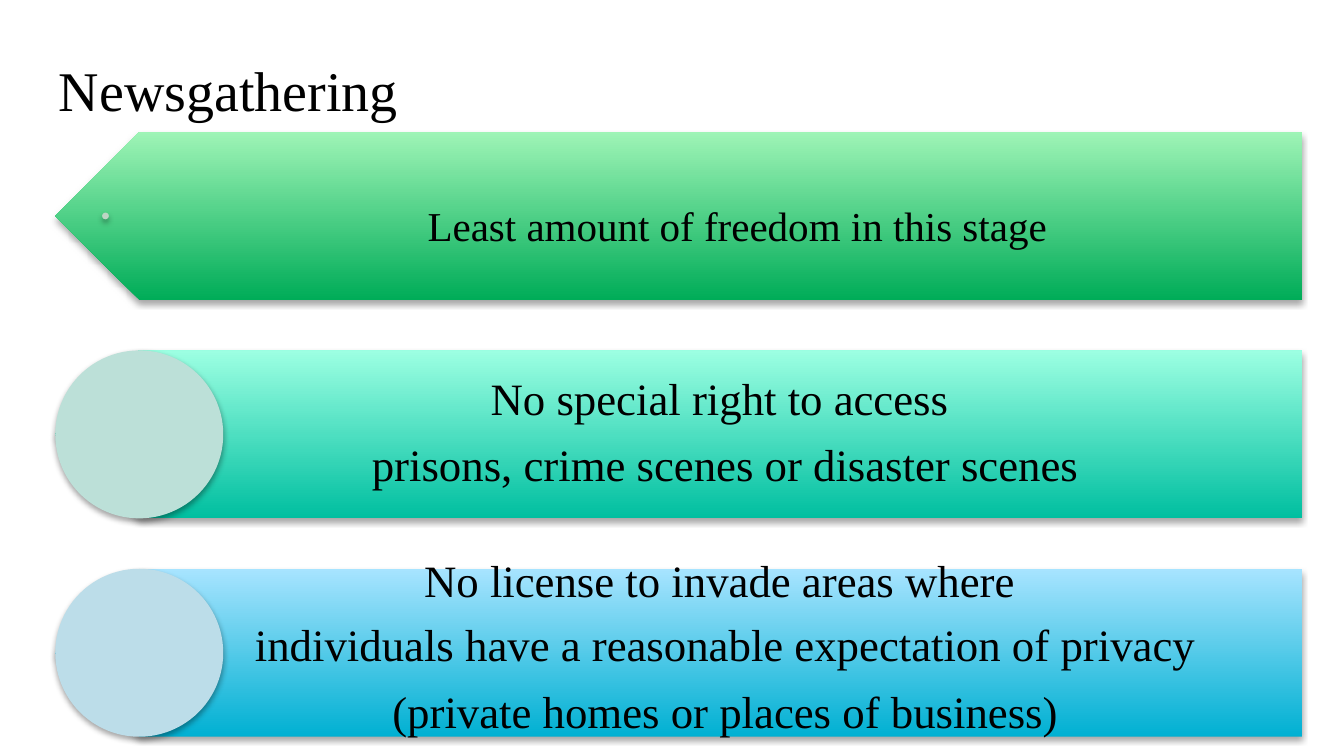
from lxml import etree
from pptx import Presentation
from pptx.dml.color import RGBColor
from pptx.enum.shapes import MSO_SHAPE
from pptx.enum.text import MSO_ANCHOR, PP_ALIGN
from pptx.oxml.ns import qn
from pptx.util import Pt

PENTAGON = MSO_SHAPE.PENTAGON
OVAL = MSO_SHAPE.OVAL
TOP = MSO_ANCHOR.TOP
MIDDLE = MSO_ANCHOR.MIDDLE
LEFT = PP_ALIGN.LEFT
CENTER = PP_ALIGN.CENTER

BLACK = RGBColor(0x00, 0x00, 0x00)
FONT = "Times New Roman"

TITLE = "Newsgathering"
BANDS = [
    {
        "lines": [("Least amount of freedom in this stage", 0.9)],
        "size": 22,
        "insets": (60.5, 25, 21.6, 11.5),
        "dark": RGBColor(0x00, 0xAC, 0x58),
        "light": RGBColor(0x9E, 0xF4, 0xB6),
        "circle": RGBColor(0xBD, 0xD5, 0xC4),
        "diameter": 3.6,
        "circle_left": 54.7,
    },
    {
        "lines": [
            ("No special right to access ", 0.9),
            ("prisons, crime scenes or disaster scenes", 0.9),
        ],
        "size": 24,
        "insets": (39.6, 7.2, 13.7, 7.2),
        "dark": RGBColor(0x00, 0xBF, 0xA0),
        "light": RGBColor(0x9C, 0xFF, 0xE2),
        "circle": RGBColor(0xBC, 0xE0, 0xD8),
        "diameter": 90,
        "circle_left": 29.6,
    },
    {
        "lines": [
            ("No license to invade areas where ", 0.7),
            ("individuals have a reasonable expectation of privacy", 0.9),
            ("(private homes or places of business)", 0.9),
        ],
        "size": 24,
        "insets": (39.6, 7.2, 13.7, 7.2),
        "dark": RGBColor(0x00, 0xB0, 0xD2),
        "light": RGBColor(0xA7, 0xE4, 0xFF),
        "circle": RGBColor(0xBC, 0xDD, 0xE9),
        "diameter": 90,
        "circle_left": 29.6,
    },
]

BAND_LEFT, BAND_TOP, BAND_WIDTH, BAND_HEIGHT = 29.6, 70.7, 668, 90
BAND_PITCH = 117
TEXT_LEFT, TEXT_WIDTH = 52.6, 645.8
PARAGRAPH_GAP = 9.5


def add_shadow(shape):
    shape.shadow.inherit = False
    effects = shape._element.spPr.find(qn("a:effectLst"))
    shadow = etree.SubElement(
        effects, qn("a:outerShdw"), blurRad=str(Pt(3.1)), dist=str(Pt(1.8)),
        dir="5400000", rotWithShape="0")
    color = etree.SubElement(shadow, qn("a:srgbClr"), val=str(BLACK))
    etree.SubElement(color, qn("a:alpha"), val="35000")


def add_shape(slide, kind, left, top, width, height):
    shape = slide.shapes.add_shape(kind, Pt(left), Pt(top), Pt(width), Pt(height))
    shape.line.fill.background()
    add_shadow(shape)
    return shape


def add_text(slide, box, lines, size, insets, anchor, alignment):
    frame = slide.shapes.add_textbox(*map(Pt, box)).text_frame
    frame.word_wrap = True
    frame.vertical_anchor = anchor
    (frame.margin_left, frame.margin_top,
     frame.margin_right, frame.margin_bottom) = map(Pt, insets)
    for index, (text, spacing) in enumerate(lines):
        paragraph = frame.add_paragraph() if index else frame.paragraphs[0]
        paragraph.alignment = alignment
        paragraph.line_spacing = spacing
        paragraph.space_after = Pt(PARAGRAPH_GAP)
        run = paragraph.add_run()
        run.text = text
        run.font.name = FONT
        run.font.size = Pt(size)
        run.font.color.rgb = BLACK


def add_band(slide, band, top):
    arrow = add_shape(slide, PENTAGON, BAND_LEFT, top, BAND_WIDTH, BAND_HEIGHT)
    arrow.rotation = 180
    arrow.fill.gradient()
    arrow.fill.gradient_angle = 270
    for stop, name in zip(arrow.fill.gradient_stops, ("dark", "light")):
        stop.color.rgb = band[name]

    add_text(slide, (TEXT_LEFT, top, TEXT_WIDTH, BAND_HEIGHT), band["lines"],
             band["size"], band["insets"], MIDDLE, CENTER)

    diameter = band["diameter"]
    circle = add_shape(slide, OVAL, band["circle_left"],
                       top + (BAND_HEIGHT - diameter) / 2, diameter, diameter)
    circle.fill.solid()
    circle.fill.fore_color.rgb = band["circle"]


def main():
    presentation = Presentation()
    presentation.slide_width = Pt(720)
    presentation.slide_height = Pt(405)
    slide = presentation.slides.add_slide(presentation.slide_layouts[6])
    add_text(slide, (24.5, 18.7, 671, 46.8), [(TITLE, 1.0)], 30,
             (7.2, 11, 7.2, 0), TOP, LEFT)
    for index, band in enumerate(BANDS):
        add_band(slide, band, BAND_TOP + index * BAND_PITCH)
    presentation.save("out.pptx")


if __name__ == "__main__":
    main()
